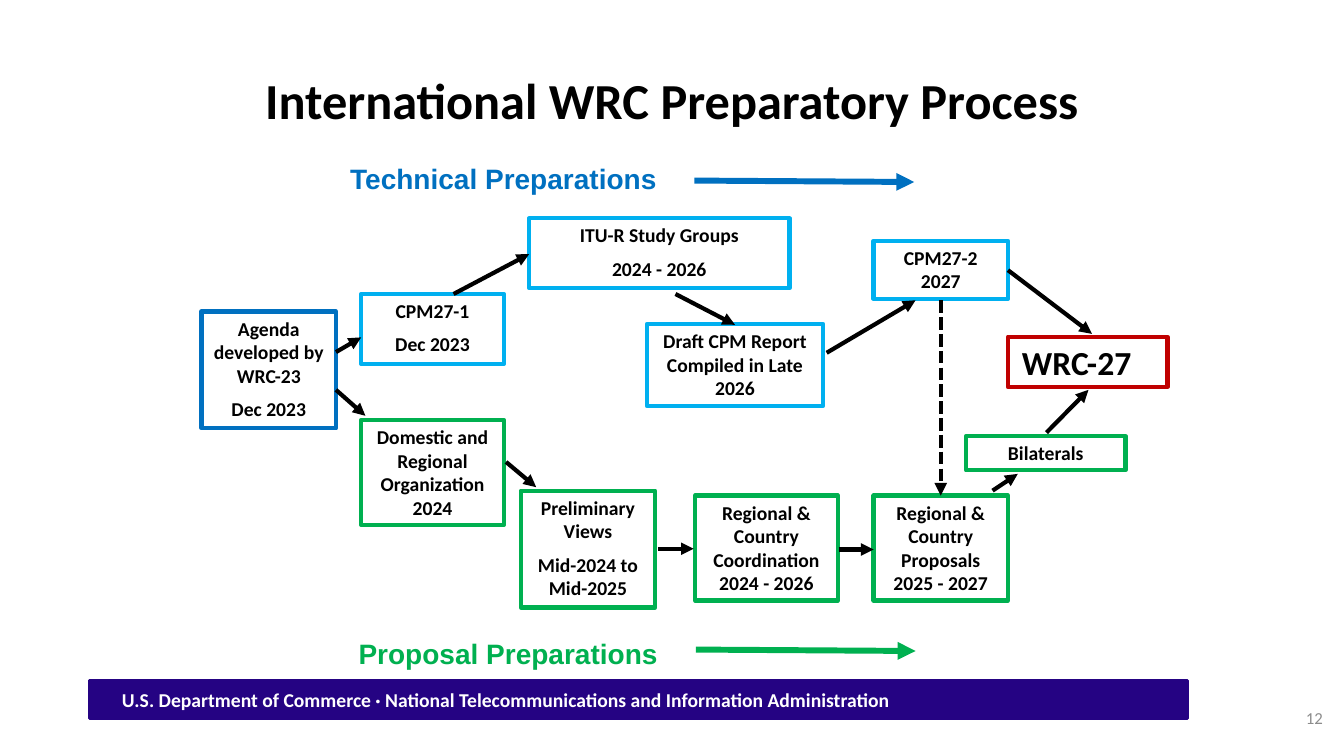
from lxml import etree
from pptx import Presentation
from pptx.dml.color import RGBColor
from pptx.enum import dml, shapes, text
from pptx.oxml import ns
from pptx.util import Pt

BLACK = RGBColor(0, 0, 0)
WHITE = RGBColor(255, 255, 255)
GRAY = RGBColor(0x8C, 0x8C, 0x8C)
NAVY = RGBColor(0x25, 0x03, 0x83)
BLUE = RGBColor(0x00, 0x70, 0xC0)
SKY = RGBColor(0x00, 0xB0, 0xF0)
GREEN = RGBColor(0x00, 0xB0, 0x50)
RED = RGBColor(0xC0, 0x00, 0x00)

LEFT, MID, RIGHT = (text.PP_ALIGN.LEFT, text.PP_ALIGN.CENTER,
                    text.PP_ALIGN.RIGHT)
TOP, CENTER, BOTTOM = (text.MSO_ANCHOR.TOP, text.MSO_ANCHOR.MIDDLE,
                       text.MSO_ANCHOR.BOTTOM)

# place (left, top, width, height), line colour, paragraphs
STEPS = [
    ((144, 222.5, 96, 83.5), BLUE,
     ["Agenda developed by WRC-23", "Dec 2023"]),
    ((258, 210, 102, 50), SKY, ["CPM27-1", "Dec 2023"]),
    ((258, 300, 102, 75), GREEN,
     ["Domestic and Regional Organization 2024"]),
    ((378, 156, 186, 50), SKY, ["ITU-R Study Groups", "2024 - 2026"]),
    ((372, 350.5, 96, 83.5), GREEN,
     ["Preliminary Views", "Mid-2024 to Mid-2025"]),
    ((496.5, 354, 102, 75), GREEN,
     ["Regional & Country Coordination 2024 - 2026"]),
    ((624, 354, 96, 75), GREEN,
     ["Regional & Country Proposals 2025 - 2027"]),
    ((624, 172, 96, 41.5), SKY, ["CPM27-2\v2027"]),
    ((462, 231.5, 126, 58.5), SKY,
     ["Draft CPM Report Compiled in Late 2026"]),
    ((690, 311.5, 114, 24.5), GREEN, ["Bilaterals"]),
]
GOAL = (720, 240.5, 114, 36), RED, ["WRC-27"]

# place, text, format
LABELS = [
    ((96, 42, 768, 54), "International WRC Preparatory Process",
     dict(size=36, align=MID, anchor=BOTTOM)),
    ((80, 487.5, 760, 24.5),
     "U.S. Department of Commerce · National Telecommunications "
     "and Information Administration", dict(color=WHITE)),
    ((728, 498, 224, 29), "12",
     dict(size=12, color=GRAY, bold=False, align=RIGHT, anchor=CENTER)),
    ((243, 111.5, 264, 31.5), "Technical Preparations",
     dict(size=20, color=BLUE, face="Arial")),
    ((204, 451, 318, 31.5), "Proposal Preparations",
     dict(size=20, color=GREEN, face="Arial", align=MID)),
]

# from x, y, to x, y
FLOWS = [
    (240, 251.5, 258, 241), (240, 278.5, 261, 297), (361.5, 330, 383, 348),
    (470, 392, 495.5, 392), (599, 392.5, 624, 392.5), (709, 350.5, 727, 338.5),
    (747.5, 309, 777.5, 278.5), (324, 210, 378, 181.5),
    (482.5, 210, 525, 232), (590.5, 252, 654, 214.5), (720, 193, 780, 238.5),
]
CHECK = (672, 214.5, 672, 354)
TRACKS = [((496, 129, 653, 130), BLUE), ((497, 464, 654, 465), GREEN)]


def write(shape, lines, size=14, color=BLACK, face="Calibri", bold=True,
          align=LEFT, anchor=TOP):
    frame = shape.text_frame
    frame.word_wrap = True
    frame.vertical_anchor = anchor
    frame.text = "\n".join(lines)
    look = dict(size=Pt(size), name=face, bold=bold)
    for num, para in enumerate(frame.paragraphs):
        para.alignment = align
        if num:
            para.space_before = Pt(7)
        for key, val in look.items():
            setattr(para.font, key, val)
        para.font.color.rgb = color


def add_box(slide, place, color, width=3):
    box = slide.shapes.add_shape(shapes.MSO_SHAPE.RECTANGLE, *map(Pt, place))
    box.shadow.inherit = False
    box.fill.background()
    box.line.color.rgb = color
    box.line.width = Pt(width)
    return box


def add_arrow(slide, ends, color=BLACK, width=3, dash=None):
    line = slide.shapes.add_connector(
        shapes.MSO_CONNECTOR.STRAIGHT, *map(Pt, ends))
    line.line.color.rgb = color
    line.line.width = Pt(width)
    if dash:
        line.line.dash_style = dash
    etree.SubElement(line.line._get_or_add_ln(), ns.qn("a:tailEnd"),
                     type="triangle")
    etree.SubElement(line._element.spPr, ns.qn("a:effectLst"))


def main():
    deck = Presentation()
    deck.slide_width, deck.slide_height = Pt(960), Pt(540)
    slide = deck.slides.add_slide(deck.slide_layouts[6])

    band = add_box(slide, (64, 486, 784, 27.5), NAVY, 2)
    band.fill.solid()
    band.fill.fore_color.rgb = NAVY

    for place, words, look in LABELS:
        label = slide.shapes.add_textbox(*map(Pt, place))
        write(label, [words], **look)

    for place, color, lines in STEPS:
        write(add_box(slide, place, color), lines, align=MID)
    place, color, lines = GOAL
    goal = add_box(slide, place, color)
    write(goal, lines, size=24, align=MID)
    goal.text_frame.margin_right = Pt(23)

    for ends in FLOWS:
        add_arrow(slide, ends)
    add_arrow(slide, CHECK, dash=dml.MSO_LINE.SQUARE_DOT)
    for ends, color in TRACKS:
        add_arrow(slide, ends, color, 4.25)
    deck.save("out.pptx")


if __name__ == "__main__":
    main()
